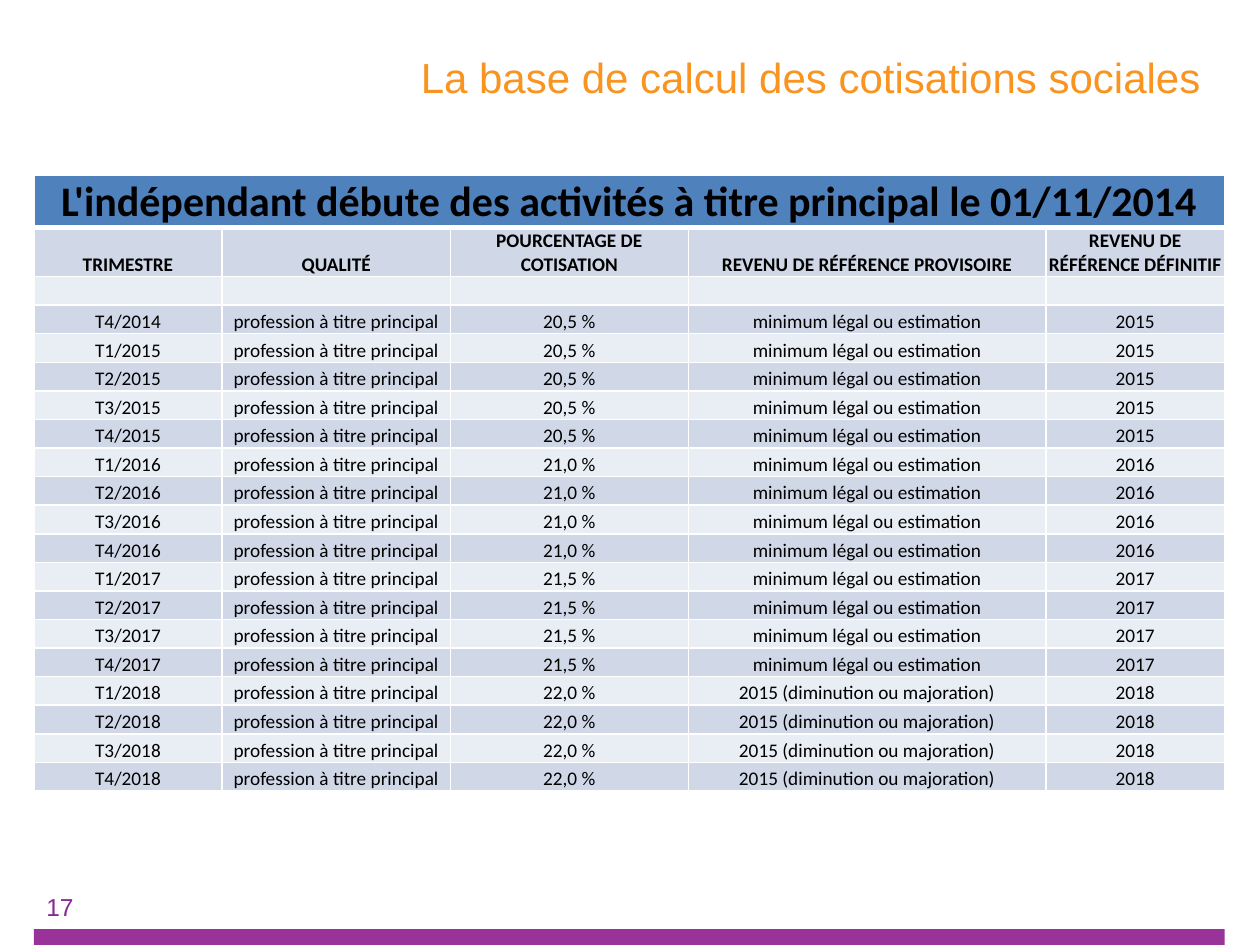
"""Build the slide on the calculation base of social contributions."""
from dataclasses import dataclass

from lxml.etree import SubElement
from pptx import Presentation
from pptx.dml.color import RGBColor
from pptx.enum.shapes import MSO_SHAPE as Shape
from pptx.enum.text import MSO_ANCHOR as Anchor, PP_ALIGN as Align
from pptx.oxml.ns import qn
from pptx.util import Pt

LEFT, WIDTH = 19.4, 680.4
COL_WIDTHS = (107.5, 130.5, 136, 204.3, 102.1)
BANNER_H, ROW_H = 28.8, 16.35
BANDS = ("D0D8E8", "E9EDF4")
BANNER = "L'indépendant débute des activités à titre principal le 01/11/2014"
HEADERS = ("TRIMESTRE", "QUALITÉ", "POURCENTAGE DE COTISATION",
           "REVENU DE RÉFÉRENCE PROVISOIRE", "REVENU DE RÉFÉRENCE DÉFINITIF")
MINIMUM = "minimum légal ou estimation"


@dataclass
class Period:
    quarters: tuple[str, ...]
    rate: str
    provisional: str
    final: str

    def rows(self) -> list[tuple[str, ...]]:
        return [(q, "profession à titre principal", self.rate, self.provisional, self.final)
                for q in self.quarters]


@dataclass
class CellStyle:
    fill: str
    size: float = 11
    bold: bool = False
    top: float = 1
    bottom: float = 1


def year(y: int) -> tuple[str, ...]:
    return tuple(f"T{n}/{y}" for n in range(1, 5))


PERIODS = (
    Period(("T4/2014", *year(2015)), "20,5 %", MINIMUM, "2015"),
    Period(year(2016), "21,0 %", MINIMUM, "2016"),
    Period(year(2017), "21,5 %", MINIMUM, "2017"),
    Period(year(2018), "22,0 %", "2015 (diminution ou majoration)", "2018"),
)


def rgb(color: str) -> RGBColor:
    return RGBColor.from_string(color)


def style_text(p, size: float, name: str, color: str, bold: bool = False) -> None:
    f = p.font
    f.size, f.name, f.bold = Pt(size), name, bold
    f.color.rgb = rgb(color)


def set_borders(cell, style: CellStyle) -> None:
    tc_pr = cell._tc.get_or_add_tcPr()
    for side, width in (("L", 1), ("R", 1), ("T", style.top), ("B", style.bottom)):
        ln = SubElement(tc_pr, qn(f"a:ln{side}"), w=str(Pt(width)))
        SubElement(SubElement(ln, qn("a:solidFill")), qn("a:srgbClr"), val="FFFFFF")


def fill_cell(cell, text: str, style: CellStyle) -> None:
    set_borders(cell, style)
    cell.fill.solid()
    cell.fill.fore_color.rgb = rgb(style.fill)
    cell.margin_left = cell.margin_right = cell.margin_top = Pt(0.75)
    cell.margin_bottom = 0
    cell.vertical_anchor = Anchor.BOTTOM
    p = cell.text_frame.paragraphs[0]
    p.alignment = Align.CENTER
    if text:
        p.text = text
    else:
        SubElement(p._p, qn("a:endParaRPr"), sz=str(style.size * 100))
    style_text(p, style.size, "Calibri", "000000", style.bold)


def add_contributions(s) -> None:
    blank = ("",) * len(HEADERS)
    rows = [(BANNER, *blank[1:]), HEADERS, blank]
    rows += [row for period in PERIODS for row in period.rows()]
    styles = [CellStyle("4F81BD", size=24, bold=True, bottom=3),
              CellStyle(BANDS[0], bold=True, top=3)]
    styles += [CellStyle(BANDS[i % 2]) for i in range(1, len(rows) - 1)]
    height = BANNER_H + ROW_H * (len(rows) - 1)
    table = s.shapes.add_table(len(rows), len(HEADERS), Pt(LEFT), Pt(100.1),
                               Pt(WIDTH), Pt(height)).table
    for col, width in zip(table.columns, COL_WIDTHS):
        col.width = Pt(width)
    for i, (row, style) in enumerate(zip(rows, styles)):
        table.rows[i].height = Pt(ROW_H if i else BANNER_H)
        for cell, text in zip(table.rows[i].cells, row):
            fill_cell(cell, text, style)
    table.cell(0, 0).merge(table.cell(0, len(HEADERS) - 1))


def add_title(s) -> None:
    title = s.shapes.title
    title.left, title.top, title.width, title.height = Pt(164.9), Pt(0), Pt(535), Pt(87.8)
    tf = title.text_frame
    tf.vertical_anchor = Anchor.MIDDLE
    p = tf.paragraphs[0]
    p.text = "La base de calcul des cotisations sociales "
    p.alignment = Align.RIGHT
    style_text(p, 24, "Arial", "F8941F")


def add_footer(s) -> None:
    bar = s.shapes.add_shape(Shape.RECTANGLE, Pt(LEFT), Pt(531), Pt(WIDTH), Pt(9))
    bar.shadow.inherit = False
    bar.fill.solid()
    bar.fill.fore_color.rgb = rgb("993399")
    bar.line.fill.background()
    tf = s.shapes.add_textbox(Pt(LEFT), Pt(506.2), Pt(144.7), Pt(36)).text_frame
    tf.word_wrap = True
    p = tf.paragraphs[0]
    p.text = "17"
    style_text(p, 14, "Arial", "862996")


def main() -> None:
    prs = Presentation()
    prs.slide_width, prs.slide_height = Pt(720), Pt(540)
    s = prs.slides.add_slide(prs.slide_layouts[5])
    add_title(s)
    add_contributions(s)
    add_footer(s)
    prs.save("out.pptx")


if __name__ == "__main__":
    main()
